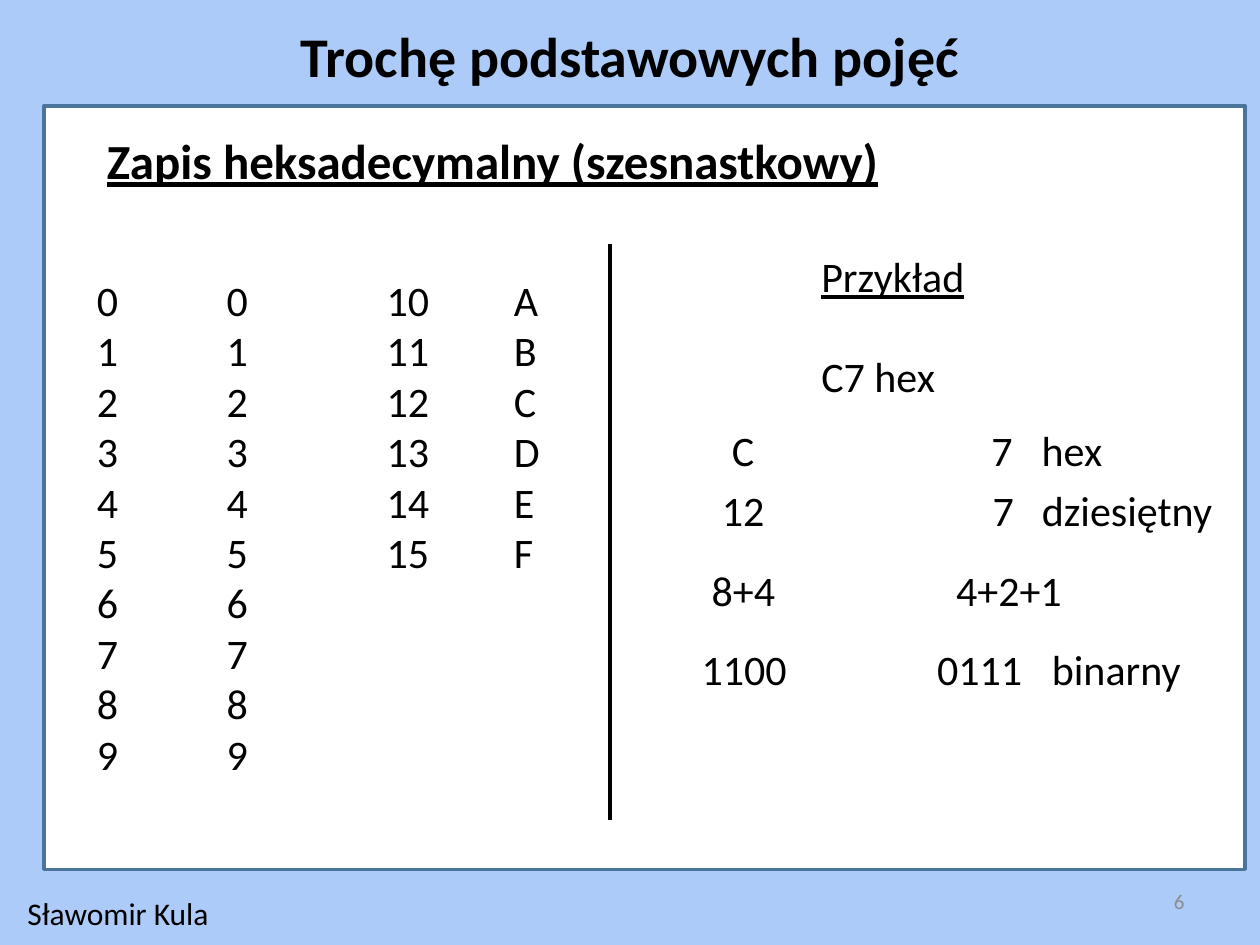
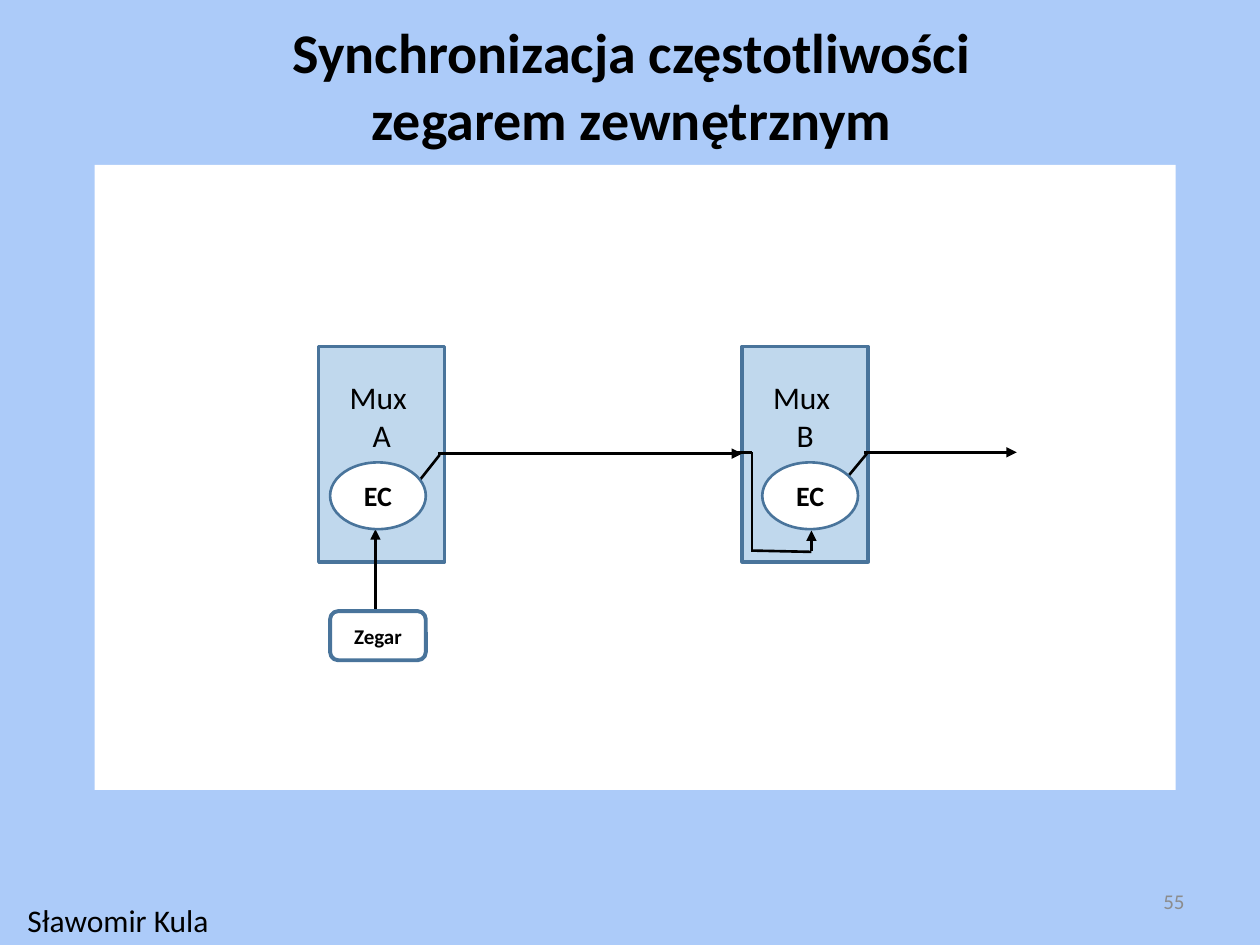
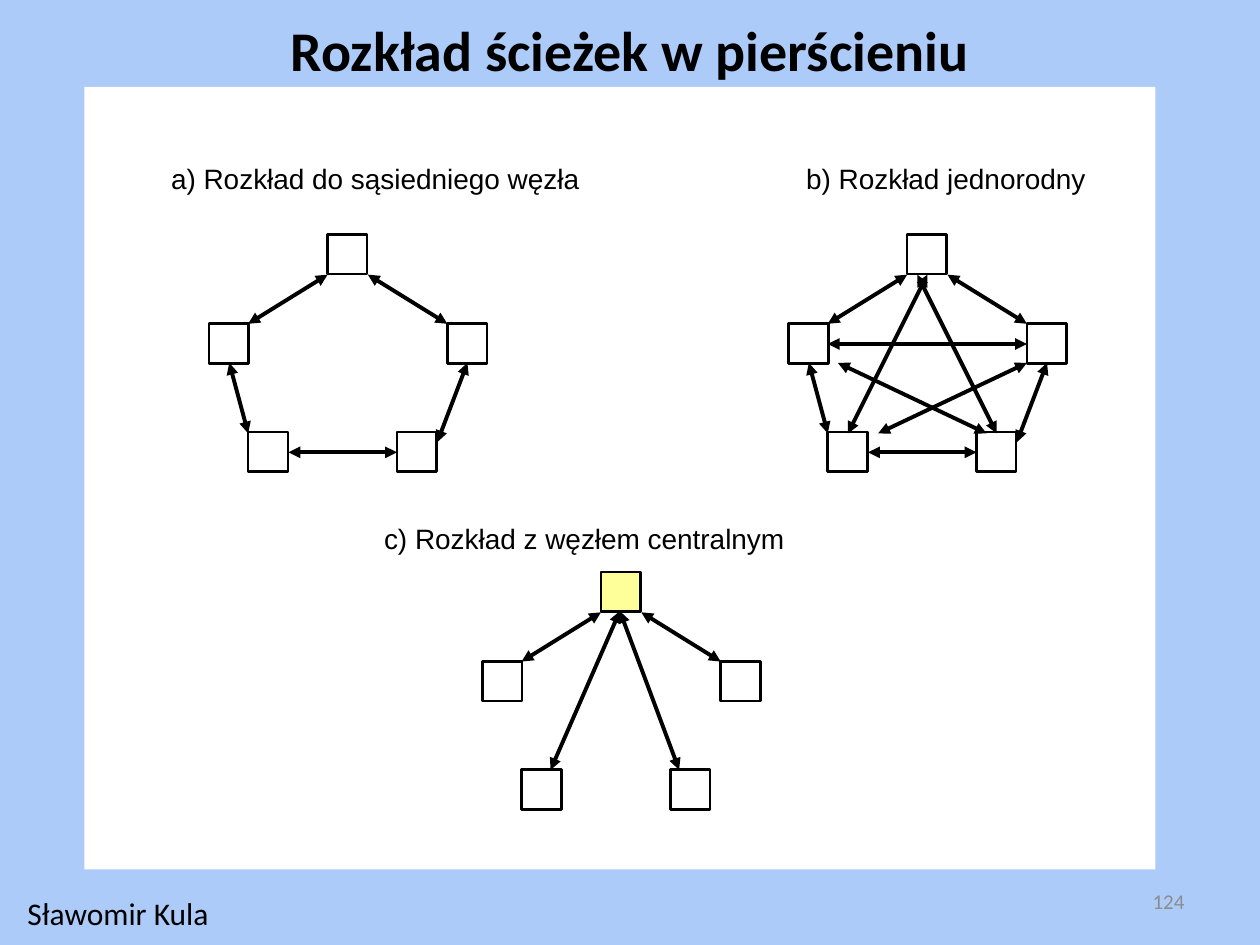
"""Builds three lecture slides on number notation, clock synchronisation and ring paths."""
from dataclasses import dataclass
from typing import NamedTuple

from pptx import Presentation
from pptx import util as u
from pptx.dml.color import RGBColor
from pptx.enum import shapes, text
from pptx.oxml import ns, xmlchemy

COLUMNS, ROWS = 100, 75
CELL = u.Inches(0.1)
SKY, WHITE, BLACK, GREY = "ACCBF9", "FFFFFF", "000000", "8C8C8C"
STEEL, PALE, YELLOW = "49749B", "C0D8ED", "FFFF99"
RECTANGLE = shapes.MSO_SHAPE.RECTANGLE
LEFT, CENTER, RIGHT = text.PP_ALIGN.LEFT, text.PP_ALIGN.CENTER, text.PP_ALIGN.RIGHT
TOP, MIDDLE = text.MSO_ANCHOR.TOP, text.MSO_ANCHOR.MIDDLE


class Area(NamedTuple):
    """A rectangle in grid cells."""
    left: float
    top: float
    width: float
    height: float


class Link(NamedTuple):
    """A straight line between two grid points."""
    x1: float
    y1: float
    x2: float
    y2: float


@dataclass(frozen=True)
class TextStyle:
    """The look of a block of text."""
    size: float
    bold: bool = False
    underline: bool = False
    color: str = BLACK
    font: str = "Calibri"
    align: text.PP_ALIGN = LEFT
    anchor: text.MSO_ANCHOR = TOP


@dataclass(frozen=True)
class BoxStyle:
    """The fill and outline of a shape."""
    fill: str = WHITE
    line: str = ""
    weight: float = 0
    kind: shapes.MSO_SHAPE = RECTANGLE


@dataclass(frozen=True)
class Label:
    """Text with its place, style and tab stops."""
    words: str
    area: Area
    style: TextStyle
    tabs: tuple[float, ...] = ()


TITLE = TextStyle(32, bold=True, align=CENTER, anchor=MIDDLE)
HEADING = TextStyle(28, bold=True, underline=True)
BODY = TextStyle(24)
EXAMPLE = TextStyle(24, underline=True)
FOOTER = TextStyle(18)
NUMBER = TextStyle(12, color=GREY, align=RIGHT, anchor=MIDDLE)
CAPTION = TextStyle(16, font="Arial")
MUX_TEXT = TextStyle(18, align=CENTER, anchor=MIDDLE)
CLOCK_TEXT = TextStyle(12, bold=True, align=CENTER, anchor=MIDDLE)
EC_TEXT = TextStyle(16, bold=True, align=CENTER, anchor=MIDDLE)

PANEL = BoxStyle()
FRAMED_PANEL = BoxStyle(line=STEEL, weight=2)
MUX = BoxStyle(PALE, STEEL, 2)
CLOCK = BoxStyle(WHITE, STEEL, 2.25, shapes.MSO_SHAPE.ROUNDED_RECTANGLE)
EC = BoxStyle(WHITE, STEEL, 1.5, shapes.MSO_SHAPE.OVAL)
NODE = BoxStyle(WHITE, BLACK, 1.5)
HUB = BoxStyle(YELLOW, BLACK, 1.5)

NODE_OFFSETS = ((0, 0), (9.5, 7.1), (-9.4, 7.1), (5.5, 15.7), (-6.3, 15.7))
SHOULDERS = (Link(3.2, 3.2, 9.5, 7.1), Link(-6.3, 7.1, 0, 3.2))
RING = SHOULDERS + (
    Link(-3.1, 17.3, 5.5, 17.3),
    Link(8.7, 16.5, 11.1, 10.2),
    Link(-7.8, 10.2, -6.3, 15.8),
)
DIAGONALS = (
    Link(0.8, 3.2, 7.1, 15.8),
    Link(1.6, 3.2, -4.7, 15.8),
    Link(9.5, 8.7, -6.3, 8.7),
    Link(6.3, 15.8, -5.5, 10.2),
    Link(9.5, 10.2, -2.3, 15.8),
)
SPOKES = (Link(-4, 15.7, 1.5, 3.1), Link(6.2, 15.7, 1.5, 3.1))


def cells(count: float) -> int:
    """Convert grid cells to a length."""
    return round(count * CELL)


def color(value: str) -> RGBColor:
    """Convert a hex string to a colour."""
    return RGBColor.from_string(value)


def write(frame, words: str, style: TextStyle, tabs: tuple[float, ...] = ()) -> None:
    """Put styled text into a text frame."""
    frame.text = words
    frame.word_wrap = True
    frame.auto_size = text.MSO_AUTO_SIZE.NONE
    frame.vertical_anchor = style.anchor
    for para in frame.paragraphs:
        para.alignment = style.align
        if tabs:
            stops = xmlchemy.OxmlElement("a:tabLst")
            for position in tabs:
                stop = xmlchemy.OxmlElement("a:tab")
                stop.set("pos", str(cells(position)))
                stop.set("algn", "l")
                stops.append(stop)
            para._p.get_or_add_pPr().append(stops)
        for span in para.runs:
            font = span.font
            font.name, font.size = style.font, u.Pt(style.size)
            font.bold, font.underline = style.bold, style.underline
            font.color.rgb = color(style.color)


def add_label(page, label: Label) -> None:
    """Draw a text box."""
    box = page.shapes.add_textbox(*map(cells, label.area))
    write(box.text_frame, label.words, label.style, label.tabs)


def add_box(page, area: Area, style: BoxStyle):
    """Draw a filled shape and return it."""
    box = page.shapes.add_shape(style.kind, *map(cells, area))
    box.shadow.inherit = False
    box.fill.solid()
    box.fill.fore_color.rgb = color(style.fill)
    if style.line:
        box.line.color.rgb = color(style.line)
        box.line.width = u.Pt(style.weight)
    else:
        box.line.fill.background()
    return box


def add_link(page, link: Link, weight: float, ends: tuple[str, ...] = ()) -> None:
    """Draw a line with arrowheads at the named ends."""
    line = page.shapes.add_connector(shapes.MSO_CONNECTOR.STRAIGHT, *map(cells, link))
    line.line.color.rgb = color(BLACK)
    line.line.width = u.Pt(weight)
    properties = line.element.spPr
    outline = properties.find(ns.qn("a:ln"))
    for end in ends:
        arrow = xmlchemy.OxmlElement(f"a:{end}")
        arrow.set("type", "triangle")
        outline.append(arrow)
    properties.append(xmlchemy.OxmlElement("a:effectLst"))


def add_page(deck, title: str, title_area: Area, panel: Area, panel_style: BoxStyle,
             number: int, footer_top: float = 70.5):
    """Add a slide with its title, panel, footer and number."""
    page = deck.slides.add_slide(deck.slide_layouts[5])
    heading = page.shapes.title
    heading.left, heading.top, heading.width, heading.height = map(cells, title_area)
    frame = heading.text_frame
    frame.margin_left = frame.margin_right = frame.margin_top = frame.margin_bottom = 0
    write(frame, title, TITLE)
    add_box(page, panel, panel_style)
    add_label(page, Label(str(number), Area(71.7, 69.5, 23.3, 4), NUMBER))
    add_label(page, Label("Sławomir Kula", Area(1.2, footer_top, 18, 4), FOOTER))
    return page


def add_notation_page(deck) -> None:
    """Build the slide on hexadecimal notation."""
    page = add_page(deck, "Trochę podstawowych pojęć", Area(5, -1.9, 90, 12.5),
                    Area(3.5, 8.4, 95.3, 60.6), FRAMED_PANEL, 6)
    digits = "\n".join(f"{value}\t{value}" for value in range(10))
    letters = "\n".join(f"{value}\t{value:X}" for value in range(10, 16))
    labels = (
        Label("Zapis heksadecymalny (szesnastkowy)", Area(7.5, 9.9, 66, 5.7), HEADING),
        Label(digits, Area(6.7, 21.3, 16.3, 41.4), BODY, (10.3,)),
        Label(letters, Area(29.7, 21.3, 18.2, 25.2), BODY, (10.1,)),
        Label("Przykład", Area(64.2, 19.4, 15, 5), EXAMPLE),
        Label("C7 hex", Area(64.2, 27.3, 15, 5), BODY),
        Label("C\t7\thex", Area(57.1, 33.2, 35, 5), BODY, (20.6, 24.6)),
        Label("12\t7\tdziesiętny", Area(56.3, 38, 42.5, 5), BODY, (21.5, 25.4)),
        Label("8+4\t4+2+1", Area(55.5, 44.3, 43.3, 5), BODY, (19.4,)),
        Label("1100\t0111\tbinarny", Area(54.7, 50.6, 43, 5), BODY, (18.7, 27.8)),
    )
    for label in labels:
        add_label(page, label)
    add_link(page, Link(48.4, 19.4, 48.4, 65.1), 2.25)


def add_clock_page(deck) -> None:
    """Build the slide on synchronisation by an external clock."""
    page = add_page(deck, "Synchronizacja częstotliwości \nzegarem zewnętrznym ",
                    Area(22.4, 1.3, 56.5, 10.8), Area(7.5, 13.1, 85.8, 49.6),
                    PANEL, 55, footer_top=71)
    for name, left in (("A", 25.3), ("B", 58.9)):
        frame = add_box(page, Area(left, 27.5, 10, 17.1), MUX).text_frame
        write(frame, f"Mux \n{name}", MUX_TEXT)
        frame.margin_bottom = cells(6.6)
    arrows = (
        Link(34.8, 36, 58.9, 36),
        Link(68.6, 35.9, 80.7, 35.9),
        Link(29.8, 48.5, 29.8, 42),
        Link(64.4, 43.7, 64.4, 42.1),
    )
    wires = (
        Link(58.4, 35.9, 59.7, 35.9),
        Link(59.7, 43.8, 59.7, 35.9),
        Link(59.7, 43.7, 64.4, 43.8),
        Link(34.9, 36.1, 33, 38.5),
        Link(68.8, 36, 66.9, 38.3),
    )
    for link in arrows:
        add_link(page, link, 1.5, ("tailEnd",))
    for link in wires:
        add_link(page, link, 1.5)
    clock = add_box(page, Area(26.2, 48.5, 7.6, 3.9), CLOCK)
    write(clock.text_frame, "Zegar", CLOCK_TEXT)
    for left in (26.2, 60.5):
        oval = add_box(page, Area(left, 36.7, 7.6, 5.3), EC)
        write(oval.text_frame, "EC", EC_TEXT)


def add_network(page, left: float, top: float, links: tuple[Link, ...],
                first: BoxStyle = NODE) -> None:
    """Draw five nodes and their links from the top node's corner."""
    for index, (across, down) in enumerate(NODE_OFFSETS):
        area = Area(left + across, top + down, 3.15, 3.15)
        add_box(page, area, NODE if index else first)
    for link in links:
        moved = Link(left + link.x1, top + link.y1, left + link.x2, top + link.y2)
        add_link(page, moved, 2.25, ("headEnd", "tailEnd"))


def add_ring_page(deck) -> None:
    """Build the slide on path distribution in a ring."""
    page = add_page(deck, "Rozkład ścieżek w pierścieniu", Area(22.5, 1.2, 55, 5.4),
                    Area(6.7, 6.9, 85, 62.1), PANEL, 124)
    add_network(page, 26, 18.6, RING)
    add_network(page, 72, 18.6, RING + DIAGONALS)
    add_network(page, 47.7, 45.4, SHOULDERS + SPOKES, HUB)
    for words, left, top in (
        ("a) Rozkład do sąsiedniego węzła", 12.6, 12.3),
        ("b) Rozkład jednorodny", 63, 12.3),
        ("c) Rozkład z węzłem centralnym", 29.5, 40.9),
    ):
        add_label(page, Label(words, Area(left, top, 36, 3.7), CAPTION))


def main() -> None:
    """Build and save the deck."""
    deck = Presentation()
    deck.slide_width, deck.slide_height = cells(COLUMNS), cells(ROWS)
    background = deck.slide_master.background.fill
    background.solid()
    background.fore_color.rgb = color(SKY)
    add_notation_page(deck)
    add_clock_page(deck)
    add_ring_page(deck)
    deck.save("out.pptx")


if __name__ == "__main__":
    main()
